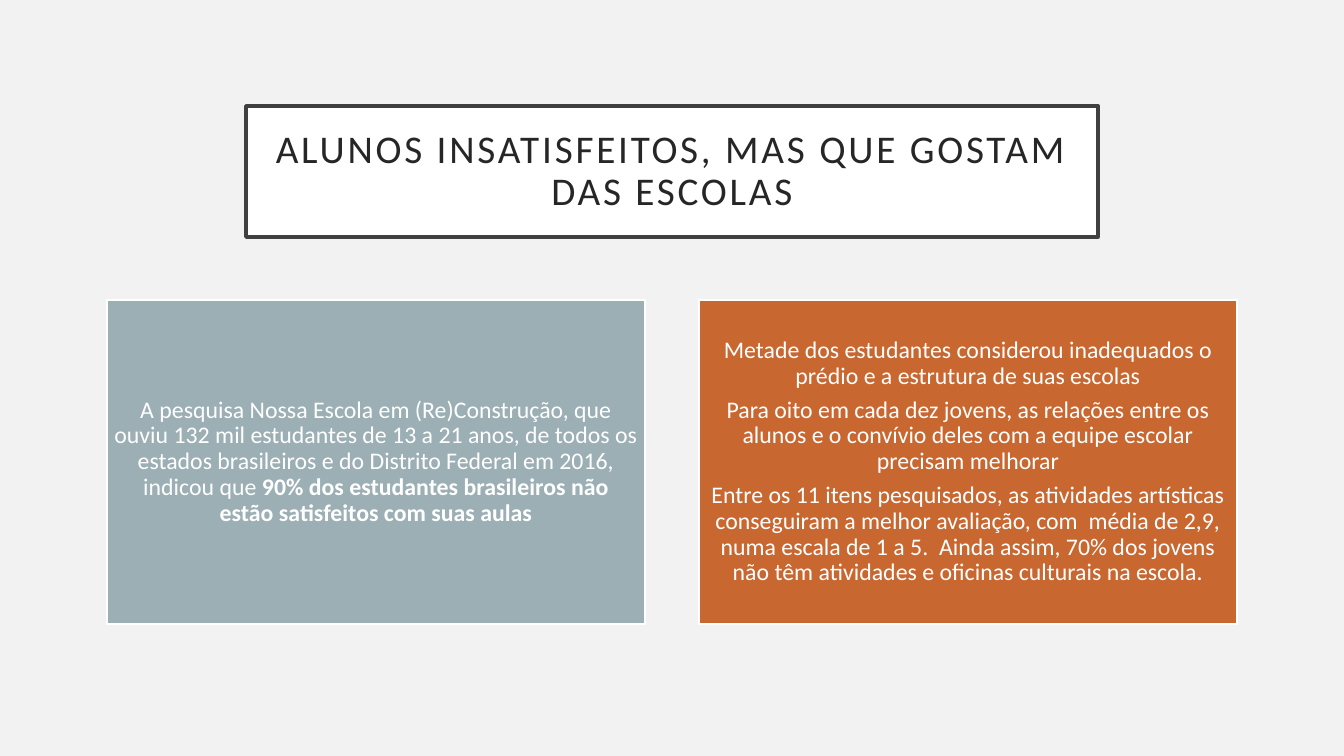
from pptx import Presentation
from pptx.dml.color import RGBColor
from pptx.enum.shapes import MSO_SHAPE
from pptx.enum.text import MSO_ANCHOR, MSO_AUTO_SIZE, PP_ALIGN
from pptx.util import Emu, Pt

PX_PER_INCH = 100.8
CARD_LEFT, CARD_TOP, CARD_WIDTH, CARD_HEIGHT = 107, 300, 538, 324
CARD_PITCH = 592

SURVEY = [
    [
        ("A pesquisa Nossa Escola em (Re)Construção, que ouviu 132 mil estudantes "
         "de 13 a 21 anos, de todos os estados brasileiros e do Distrito Federal "
         "em 2016, indicou que ", False),
        ("90% dos estudantes brasileiros não estão satisfeitos com suas aulas", True),
    ],
]
FINDINGS = [
    [("Metade dos estudantes considerou inadequados o prédio e a estrutura de "
      "suas escolas", False)],
    [("Para oito em cada dez jovens, as relações entre os alunos e o convívio "
      "deles com a equipe escolar precisam melhorar", False)],
    [("Entre os 11 itens pesquisados, as atividades artísticas conseguiram a "
      "melhor avaliação, com  média de 2,9, numa escala de 1 a 5.  Ainda assim, "
      "70% dos jovens não têm atividades e oficinas culturais na escola.", False)],
]


def px(length):
    """Turn pixels into EMU."""
    return Emu(round(length * 914400 / PX_PER_INCH))


def color(hex_code):
    """Turn a hex string into a colour."""
    return RGBColor.from_string(hex_code)


def paint(box, fill, line, line_width):
    """Give a box its fill and outline."""
    box.fill.solid()
    box.fill.fore_color.rgb = color(fill)
    box.line.color.rgb = color(line)
    box.line.width = Pt(line_width)


def write(box, paragraphs, *, size, ink, inset, space_after=0, tracking=0):
    """Fill a box with centred paragraphs made of (text, bold) runs."""
    frame = box.text_frame
    frame.word_wrap = True
    frame.auto_size = MSO_AUTO_SIZE.NONE
    frame.vertical_anchor = MSO_ANCHOR.MIDDLE
    frame.margin_left = frame.margin_right = px(inset)
    frame.margin_top = frame.margin_bottom = px(inset)
    for index, parts in enumerate(paragraphs):
        paragraph = frame.add_paragraph() if index else frame.paragraphs[0]
        paragraph.alignment = PP_ALIGN.CENTER
        paragraph.line_spacing = 0.9
        paragraph.space_before = Pt(0)
        paragraph.space_after = Pt(space_after)
        for text, bold in parts:
            run = paragraph.add_run()
            run.text = text
            run.font.name = "Calibri"
            run.font.size = Pt(size)
            run.font.bold = bold
            run.font.color.rgb = color(ink)
            if tracking:
                run.font._element.set("spc", str(tracking * 100))


def add_title(slide, text):
    """Place the framed title."""
    title = slide.shapes.title
    title.left, title.top, title.width, title.height = map(px, (246, 106, 852, 131))
    paint(title, "FFFFFF", "404040", 2.5)
    write(title, [[(text, False)]], size=28, ink="262626", inset=20, tracking=2)


def add_card(slide, column, fill, paragraphs):
    """Add a coloured card in the given column."""
    card = slide.shapes.add_shape(
        MSO_SHAPE.RECTANGLE, px(CARD_LEFT + column * CARD_PITCH), px(CARD_TOP),
        px(CARD_WIDTH), px(CARD_HEIGHT))
    card.shadow.inherit = False
    paint(card, fill, "FFFFFF", 1)
    write(card, paragraphs, size=17, ink="FFFFFF", inset=7, space_after=6)


def main():
    """Build the slide and save it."""
    deck = Presentation()
    deck.slide_width, deck.slide_height = px(1344), px(756)
    slide = deck.slides.add_slide(deck.slide_layouts[5])
    slide.background.fill.solid()
    slide.background.fill.fore_color.rgb = color("F2F2F2")
    add_title(slide, "ALUNOS INSATISFEITOS, MAS QUE GOSTAM DAS ESCOLAS")
    cards = [("9BAFB5", SURVEY), ("C96731", FINDINGS)]
    for column, (fill, paragraphs) in enumerate(cards):
        add_card(slide, column, fill, paragraphs)
    deck.save("out.pptx")


if __name__ == "__main__":
    main()
